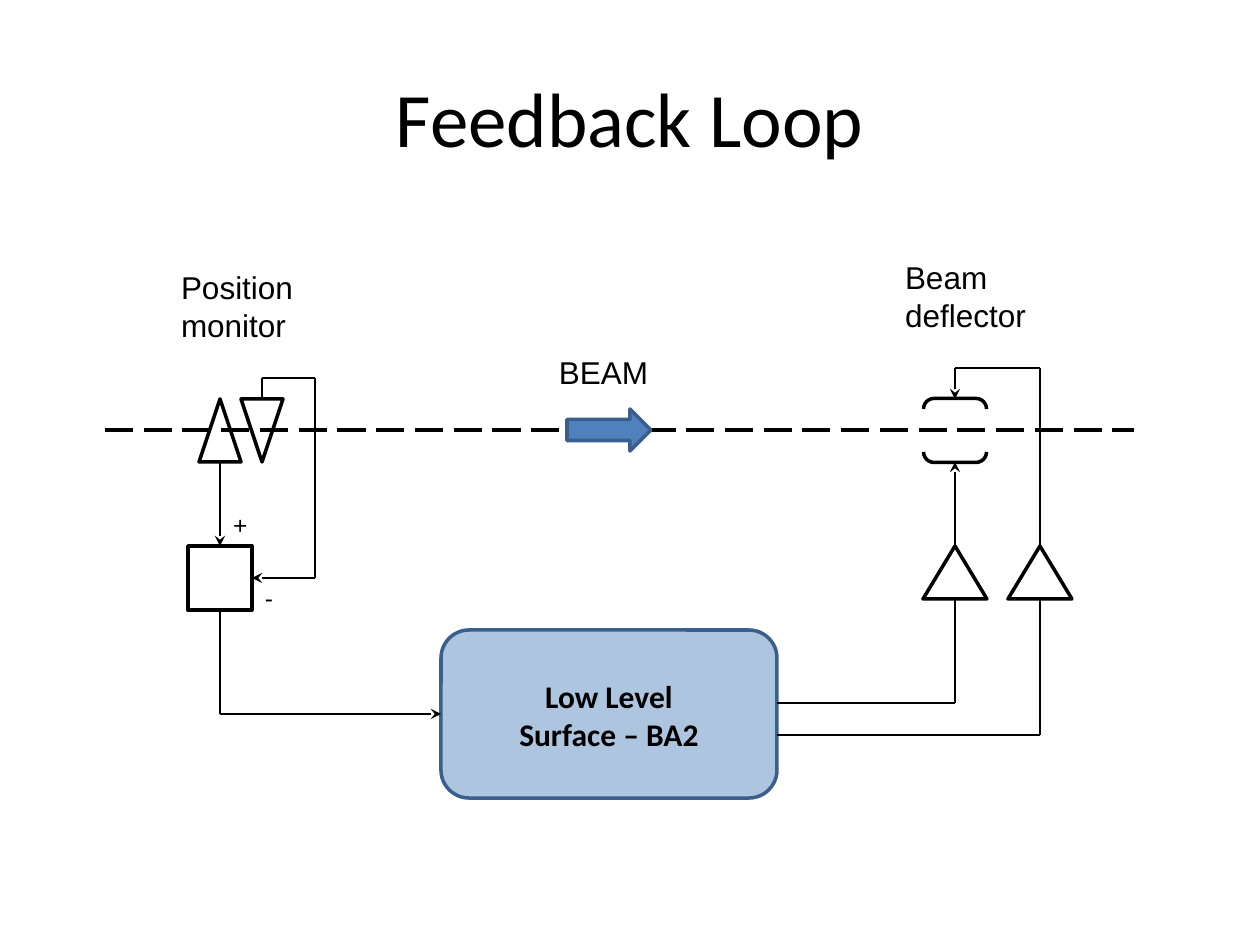
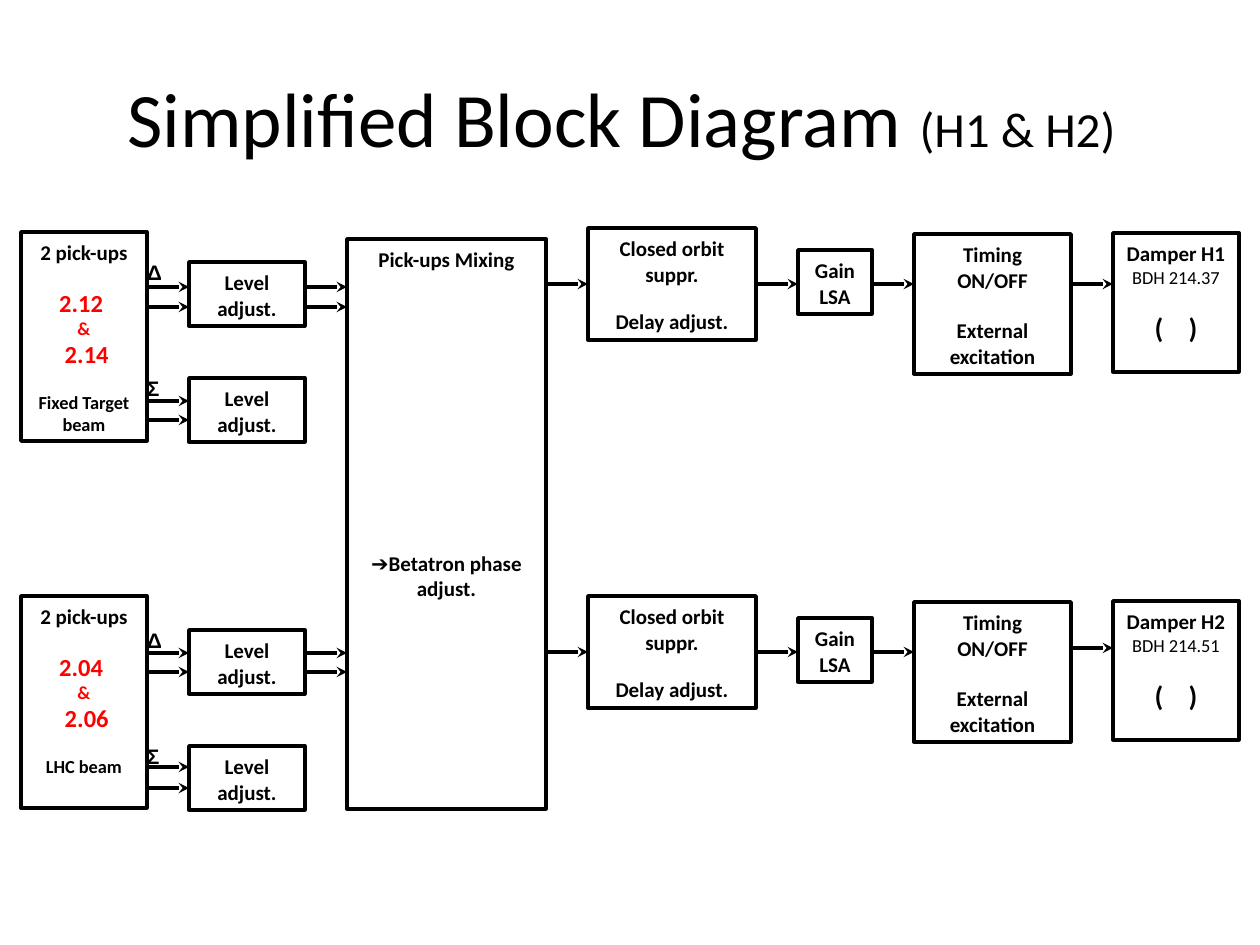
from dataclasses import dataclass
from itertools import accumulate, pairwise
from typing import Any, NamedTuple

from lxml import etree
from pptx import Presentation
from pptx.dml.color import RGBColor
from pptx.enum.dml import MSO_LINE
from pptx.enum.shapes import MSO_CONNECTOR, MSO_SHAPE
from pptx.enum.text import MSO_ANCHOR, PP_ALIGN
from pptx.oxml.ns import qn
from pptx.util import Emu, Pt

RECTANGLE = MSO_SHAPE.RECTANGLE
ROUNDED = MSO_SHAPE.ROUNDED_RECTANGLE
TRIANGLE = MSO_SHAPE.ISOSCELES_TRIANGLE
BRACKETS = MSO_SHAPE.DOUBLE_BRACKET
RIGHT_ARROW = MSO_SHAPE.RIGHT_ARROW
STRAIGHT = MSO_CONNECTOR.STRAIGHT
LONG_DASH = MSO_LINE.LONG_DASH
LEFT, CENTER = PP_ALIGN.LEFT, PP_ALIGN.CENTER
TOP, MIDDLE = MSO_ANCHOR.TOP, MSO_ANCHOR.MIDDLE

PX_PER_INCH = 126
EMU_PER_PX = 914400 / PX_PER_INCH
TITLE_ONLY = 5
HEADING, BODY = "Calibri", "Arial"
BLACK, WHITE, RED = "000000", "FFFFFF", "FF0000"
BLUE, NAVY = "4F81BD", "3A5F8C"
SMALL_GAP, LINE_GAP, MIXING_GAP = 12.8, 14.6, 159
SIDE_AT_LEFT, SIDE_AT_RIGHT = 1, 3
SIDE_ON_TOP, SIDE_ON_BOTTOM = 0, 2

Point = tuple[int, int]


class Run(NamedTuple):
    text: str
    size: float = 12
    bold: bool = True
    color: str = BLACK
    font: str = HEADING
    spacing: int = 0


class Para(NamedTuple):
    runs: list[Run]
    before: float = 0


class Join(NamedTuple):
    shape: Any
    side: int


@dataclass
class Block:
    left: int
    top: int
    width: int
    height: int
    paras: tuple[Para, ...] = ()
    kind: Any = RECTANGLE
    fill: str = ""
    alpha: int = 100
    outline: str = BLACK
    rotation: int = 0
    anchor: Any = TOP


@dataclass
class Label:
    left: int
    top: int
    width: int
    height: int
    lines: tuple[str, ...]
    size: float = 18
    bold: bool = False
    side_inset: int = 13


@dataclass
class Row:
    drop: int
    pickup_top: int
    pickup_height: int
    pickups: tuple[str, str]
    beam: str
    delta_ys: tuple[int, int]
    sigma_ys: tuple[int, int]
    damper: str
    magnet: str
    damper_y: int


def px(length: float) -> Emu:
    return Emu(round(length * EMU_PER_PX))


def rgb(value: str) -> RGBColor:
    return RGBColor.from_string(value)


def assign(target: Any, values: dict[str, Any]) -> None:
    for name, value in values.items():
        setattr(target, name, value)


def para(text: str, before: float = 0, **style: Any) -> Para:
    return Para([Run(text, **style)], before)


def write(frame: Any, paras: list[Para] | tuple[Para, ...], align: Any) -> None:
    for index, content in enumerate(paras):
        paragraph = frame.add_paragraph() if index else frame.paragraphs[0]
        assign(paragraph, {"alignment": align, "space_before": Pt(content.before)})
        for piece in content.runs:
            run = paragraph.add_run()
            run.text = piece.text
            assign(run.font, {"name": piece.font, "size": Pt(piece.size), "bold": piece.bold})
            run.font.color.rgb = rgb(piece.color)
            if piece.spacing:
                run.font._element.set("spc", str(piece.spacing))


def add_title_slide(deck: Any, runs: list[Run]) -> Any:
    slide = deck.slides.add_slide(deck.slide_layouts[TITLE_ONLY])
    title = slide.shapes.title
    assign(title, {"left": px(63), "top": px(38), "width": px(1134), "height": px(157)})
    assign(title.text_frame, {"vertical_anchor": MIDDLE, "word_wrap": True})
    write(title.text_frame, [Para(runs)], CENTER)
    return slide


def draw_block(slide: Any, block: Block) -> Any:
    shape = slide.shapes.add_shape(
        block.kind, px(block.left), px(block.top), px(block.width), px(block.height)
    )
    shape.shadow.inherit = False
    shape.rotation = block.rotation
    if block.fill:
        shape.fill.solid()
        shape.fill.fore_color.rgb = rgb(block.fill)
        if block.alpha < 100:
            color = shape.element.spPr.find(qn("a:solidFill"))[0]
            etree.SubElement(color, qn("a:alpha"), val=str(block.alpha * 1000))
    else:
        shape.fill.background()
    shape.line.color.rgb = rgb(block.outline)
    shape.line.width = Pt(2)
    if block.paras:
        frame = shape.text_frame
        inset = {"margin_top": px(8), "margin_bottom": px(6)}
        assign(frame, {"word_wrap": True, "vertical_anchor": block.anchor, **inset})
        write(frame, block.paras, CENTER)
    return shape


def draw_label(slide: Any, label: Label) -> None:
    box = slide.shapes.add_textbox(
        px(label.left), px(label.top), px(label.width), px(label.height)
    )
    inset = px(label.side_inset)
    assign(box.text_frame, {"word_wrap": True, "margin_left": inset, "margin_right": inset})
    lines = [para(line, size=label.size, bold=label.bold, font=BODY) for line in label.lines]
    write(box.text_frame, lines, LEFT)


def draw_signal(
    slide: Any,
    points: list[Point],
    width: float = 2,
    arrow: bool = True,
    dash: Any = None,
    start: Join | None = None,
    end: Join | None = None,
) -> None:
    segments = list(pairwise(points))
    for index, (begin, finish) in enumerate(segments):
        line = slide.shapes.add_connector(STRAIGHT, *map(px, begin + finish))
        assign(line.line, {"width": Pt(width), "dash_style": dash})
        line.line.color.rgb = rgb(BLACK)
        last = index == len(segments) - 1
        properties = line.element.spPr
        if arrow and last:
            etree.SubElement(properties.find(qn("a:ln")), qn("a:tailEnd"), type="stealth")
        etree.SubElement(properties, qn("a:effectLst"))
        if start and index == 0:
            line.begin_connect(*start)
        if end and last:
            line.end_connect(*end)


def build_feedback_loop(deck: Any) -> None:
    slide = add_title_slide(deck, [Run("Feedback Loop", 44, False)])
    subtractor = draw_block(slide, Block(188, 546, 64, 64))
    draw_signal(slide, [(105, 430), (1134, 430)], arrow=False, dash=LONG_DASH)
    low_level_text = (para("Low Level", size=18), para("Surface – BA2", size=18))
    low_level = draw_block(
        slide, Block(441, 630, 336, 168, low_level_text, ROUNDED, BLUE, 46, NAVY, anchor=MIDDLE)
    )
    for block in (
        Block(567, 409, 84, 42, kind=RIGHT_ARROW, fill=BLUE, outline=NAVY),
        Block(923, 399, 64, 63, kind=BRACKETS, rotation=90),
        Block(199, 399, 42, 63, kind=TRIANGLE),
        Block(241, 399, 42, 63, kind=TRIANGLE, rotation=180),
    ):
        draw_block(slide, block)
    for label in (
        Label(546, 347, 116, 50, ("BEAM",)),
        Label(168, 262, 147, 89, ("Position", "monitor")),
        Label(892, 252, 147, 89, ("Beam", "deflector")),
        Label(220, 504, 32, 43, ("+",), 14),
        Label(252, 577, 32, 43, ("-",), 14),
    ):
        draw_label(slide, label)
    plus_input = Join(subtractor, SIDE_ON_TOP)
    minus_input = Join(subtractor, SIDE_AT_RIGHT)
    difference = Join(subtractor, SIDE_ON_BOTTOM)
    low_level_input = Join(low_level, SIDE_AT_LEFT)
    for points, start, end in (
        ([(220, 462), (220, 546)], None, plus_input),
        ([(262, 399), (262, 378), (315, 378), (315, 578), (252, 578)], None, minus_input),
        ([(220, 610), (220, 714), (441, 714)], difference, low_level_input),
        ([(777, 703), (955, 703), (955, 462)], None, None),
        ([(777, 735), (1040, 735), (1040, 368), (955, 368), (955, 399)], None, None),
    ):
        draw_signal(slide, points, 1.5, start=start, end=end)
    for amplifier_left in (923, 1008):
        draw_block(slide, Block(amplifier_left, 546, 64, 53, kind=TRIANGLE, fill=WHITE))


COLUMN_GAP = 42
COLUMN_WIDTHS = (126, 116, 199, 168, 74, 157, 126)
LEFTS = list(accumulate((w + COLUMN_GAP for w in COLUMN_WIDTHS[:-1]), initial=21))
RIGHTS = [left + width for left, width in zip(LEFTS, COLUMN_WIDTHS)]
PICKUP, LEVEL, MIXING, ORBIT, GAIN, TIMING, DAMPER = range(7)
CHAIN_Y = 284

ROWS = (
    Row(0, 232, 209, ("2.12 ", " 2.14"), "Fixed Target beam",
        (287, 307), (401, 420), "Damper H1", "BDH 214.37", 284),
    Row(368, 596, 212, ("2.04 ", " 2.06"), "LHC beam",
        (653, 672), (767, 788), "Damper H2", "BDH 214.51", 648),
)


def draw_stage(slide: Any, column: int, top: int, height: int, *paras: Para) -> Any:
    return draw_block(slide, Block(LEFTS[column], top, COLUMN_WIDTHS[column], height, paras))


def feed(slide: Any, column: int, y: int, **joins: Join) -> None:
    draw_signal(slide, [(RIGHTS[column], y), (LEFTS[column + 1], y)], **joins)


def draw_row(slide: Any, row: Row) -> None:
    first, second = row.pickups
    drop = row.drop
    draw_stage(
        slide, PICKUP, row.pickup_top, row.pickup_height,
        para("2 pick-ups"),
        para(first, SMALL_GAP, size=14, color=RED),
        para("&", size=10.5, color=RED),
        para(second, size=14, color=RED),
        para(row.beam, SMALL_GAP, size=10.5),
    )
    for symbol, top, ys in (("Δ", 253, row.delta_ys), ("Σ", 369, row.sigma_ys)):
        draw_label(slide, Label(RIGHTS[PICKUP], top + drop, 10, 38, (symbol,), 12, True, 0))
        draw_stage(slide, LEVEL, top + 9 + drop, 64, para("Level adjust."))
        for y in ys:
            feed(slide, PICKUP, y)
    for y in row.delta_ys:
        feed(slide, LEVEL, y)
    orbit = draw_stage(
        slide, ORBIT, 228 + drop, 112,
        para("Closed orbit suppr."), para("Delay adjust.", SMALL_GAP),
    )
    draw_stage(slide, GAIN, 250 + drop, 64, para("Gain LSA"))
    draw_stage(
        slide, TIMING, 234 + drop, 140,
        para("Timing ON/OFF"), para("External excitation", LINE_GAP),
    )
    plates = [Run("(", 16), Run(" ", 16, spacing=1090), Run(")", 16)]
    draw_stage(
        slide, DAMPER, 233 + drop, 139,
        para(row.damper), para(row.magnet, size=10.5, bold=False), Para(plates, SMALL_GAP),
    )
    feed(slide, MIXING, CHAIN_Y + drop, end=Join(orbit, SIDE_AT_LEFT))
    feed(slide, ORBIT, CHAIN_Y + drop, start=Join(orbit, SIDE_AT_RIGHT))
    feed(slide, GAIN, CHAIN_Y + drop)
    feed(slide, TIMING, row.damper_y)


def build_block_diagram(deck: Any) -> None:
    title = [Run("Simplified Block Diagram ", 44, False), Run("(H1 & H2)", 28, False)]
    slide = add_title_slide(deck, title + [Run(" ", 44, False)])
    draw_stage(
        slide, MIXING, 239, 570,
        para("Pick-ups Mixing"), para("➔Betatron phase adjust.", MIXING_GAP),
    )
    for row in ROWS:
        draw_row(slide, row)


def main() -> None:
    deck = Presentation()
    assign(deck, {"slide_width": px(1260), "slide_height": px(945)})
    build_feedback_loop(deck)
    build_block_diagram(deck)
    deck.save("out.pptx")


if __name__ == "__main__":
    main()
